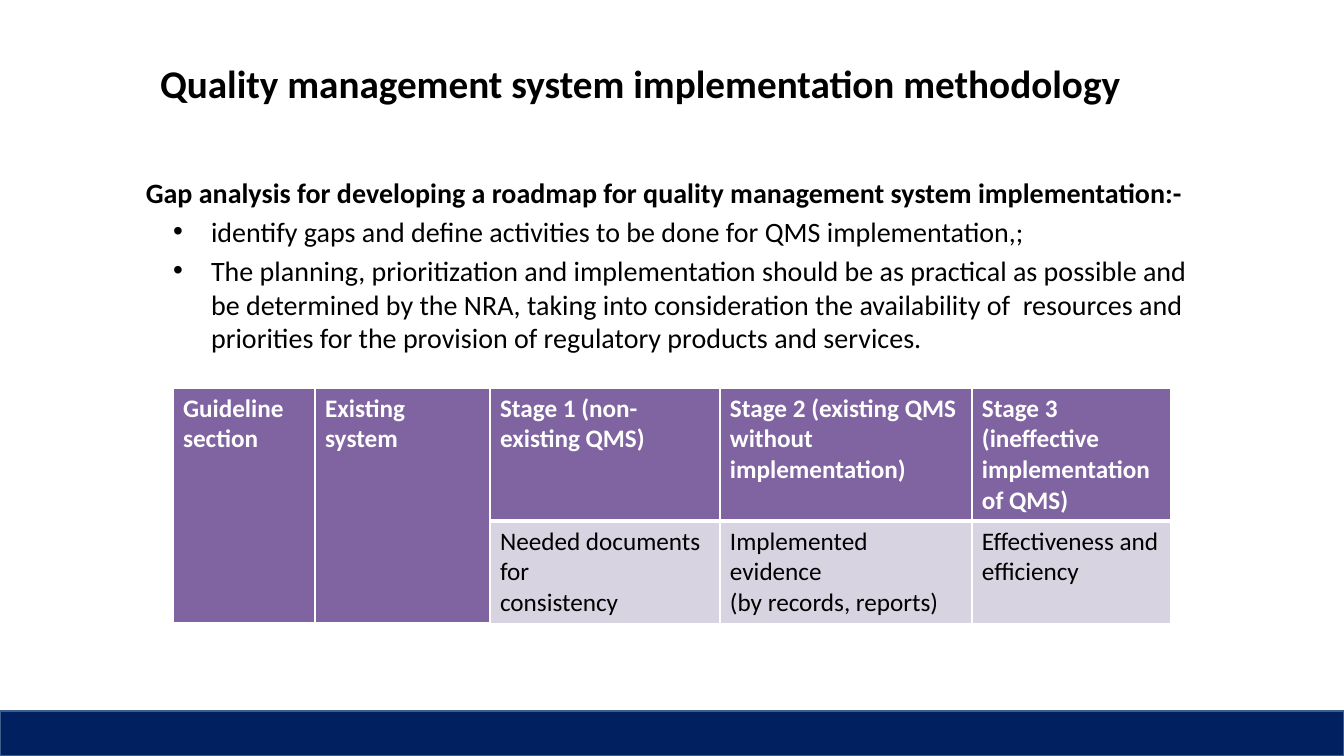
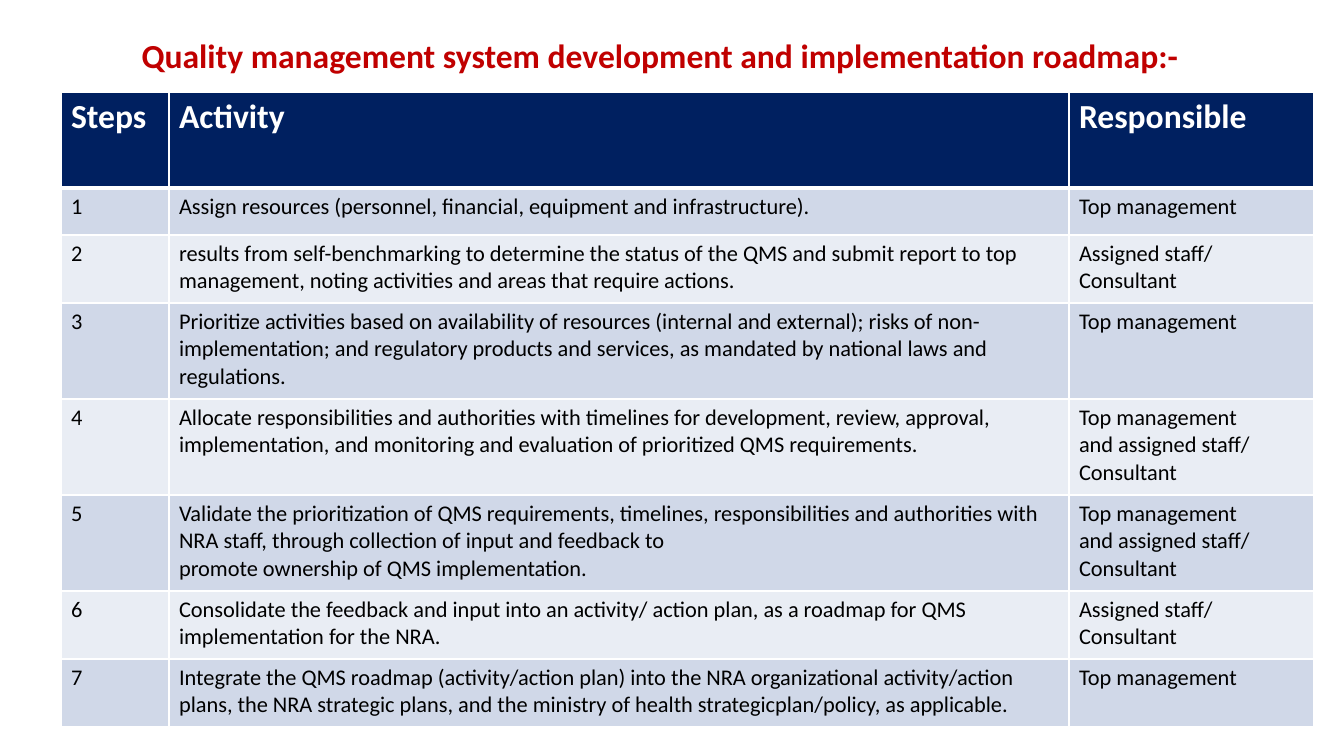
from lxml import etree
from pptx import Presentation
from pptx.dml.color import RGBColor
from pptx.enum.shapes import MSO_SHAPE
from pptx.enum.text import MSO_ANCHOR, MSO_AUTO_SIZE, PP_ALIGN
from pptx.oxml.ns import qn
from pptx.util import Pt

EMU_PER_PX = 914400 / 100.8
SLIDE_W, SLIDE_H = 1344, 756
FONT = "Calibri"
RECTANGLE = MSO_SHAPE.RECTANGLE
MIDDLE, TOP = MSO_ANCHOR.MIDDLE, MSO_ANCHOR.TOP
NO_AUTOFIT = MSO_AUTO_SIZE.NONE
CENTER, LEFT = PP_ALIGN.CENTER, PP_ALIGN.LEFT
TITLE_AND_CONTENT, TITLE_ONLY = 1, 5

BLACK = RGBColor(0x00, 0x00, 0x00)
WHITE = RGBColor(0xFF, 0xFF, 0xFF)
RED = RGBColor(0xC0, 0x00, 0x00)
NAVY = RGBColor(0x00, 0x20, 0x60)
BAND_LINE = RGBColor(0x3A, 0x5F, 0x8C)
PURPLE = RGBColor(0x80, 0x64, 0xA2)
PALE_PURPLE = RGBColor(0xD8, 0xD3, 0xE0)
PALE_BLUES = (RGBColor(0xD0, 0xD8, 0xE8), RGBColor(0xE9, 0xED, 0xF4))

GAP_HEADING = ("Gap analysis for developing a roadmap for quality management "
               "system implementation:-")
GAP_POINTS = (
    "identify gaps and define activities to be done for QMS implementation,;",
    "The planning, prioritization and implementation should be as practical as "
    "possible and be determined by the NRA, taking into consideration the "
    "availability of  resources and priorities for the provision of regulatory "
    "products and services.",
)
STAGES = (
    ("Guideline\nsection", "Existing system", "Stage 1 (non-existing QMS)",
     "Stage 2 (existing QMS\nwithout implementation)",
     "Stage 3 (ineffective\nimplementation of QMS)"),
    ("", "", "Needed documents for\nconsistency",
     "Implemented evidence\n(by records, reports)",
     "Effectiveness and\nefficiency"),
)

MANAGEMENT = "Top management"
STAFF = "Assigned staff/\nConsultant"
BOTH = "Top management\nand assigned staff/\nConsultant"
ROADMAP_HEADER = ("Steps", "Activity", "Responsible")
ROADMAP = (
    ("Assign resources (personnel, financial, equipment and infrastructure).",
     MANAGEMENT),
    ("results from self-benchmarking to determine the status of the QMS and "
     "submit report to top management, noting activities and areas that require "
     "actions.", STAFF),
    ("Prioritize activities based on availability of resources (internal and "
     "external); risks of non-implementation; and regulatory products and "
     "services, as mandated by national laws and regulations.", MANAGEMENT),
    ("Allocate responsibilities and authorities with timelines for development, "
     "review, approval, implementation, and monitoring and evaluation of "
     "prioritized QMS requirements.", BOTH),
    ("Validate the prioritization of QMS requirements, timelines, "
     "responsibilities and authorities with NRA staff, through collection of "
     "input and feedback to\npromote ownership of QMS implementation.", BOTH),
    ("Consolidate the feedback and input into an activity/ action plan, as a "
     "roadmap for QMS implementation for the NRA.", STAFF),
    ("Integrate the QMS roadmap (activity/action plan) into the NRA "
     "organizational activity/action plans, the NRA strategic plans, and the "
     "ministry of health strategicplan/policy, as applicable.", MANAGEMENT),
)


def px(length):
    return round(length * EMU_PER_PX)


def place(shape, box):
    shape.left, shape.top, shape.width, shape.height = map(px, box)


def set_font(paragraph, size, color, bold=False):
    font = paragraph.font
    font.name, font.size, font.bold = FONT, Pt(size), bold
    font.color.rgb = color


def set_bullet(paragraph, char=None, margin=0, hanging=0):
    """Give the paragraph a bullet, or take it away when there is no char."""
    props = paragraph._p.get_or_add_pPr()
    props.set("marL", str(px(margin)))
    props.set("indent", str(-px(hanging)))
    if char:
        etree.SubElement(props, qn("a:buFont"), typeface="Arial")
        etree.SubElement(props, qn("a:buChar"), char=char)
    else:
        etree.SubElement(props, qn("a:buNone"))


def add_title(slide, box, text, size, color):
    title = slide.shapes.title
    place(title, box)
    frame = title.text_frame
    frame.text = text
    frame.vertical_anchor, frame.auto_size = MIDDLE, NO_AUTOFIT
    frame.paragraphs[0].alignment = CENTER
    set_font(frame.paragraphs[0], size, color, bold=True)


def add_gap_analysis(slide, box):
    body = slide.placeholders[1]
    place(body, box)
    frame = body.text_frame
    frame.text = "\n".join((GAP_HEADING, *GAP_POINTS))
    frame.vertical_anchor, frame.auto_size = TOP, NO_AUTOFIT
    heading, *points = frame.paragraphs
    set_bullet(heading)
    heading.alignment, heading.space_before = CENTER, Pt(0)
    set_font(heading, 20, BLACK, bold=True)
    for point in points:
        set_bullet(point, "•", margin=89, hanging=38)
        point.alignment, point.space_before = LEFT, Pt(4)
        set_font(point, 20, BLACK)


def set_borders(cell, bottom):
    """Draw white borders, 1 pt on all sides but the bottom."""
    props = cell._tc.get_or_add_tcPr()
    sides = (("a:lnL", 1), ("a:lnR", 1), ("a:lnT", 1), ("a:lnB", bottom))
    for position, (tag, width) in enumerate(sides):
        line = etree.Element(qn(tag), w=str(Pt(width)))
        fill = etree.SubElement(line, qn("a:solidFill"))
        etree.SubElement(fill, qn("a:srgbClr"), val=str(WHITE))
        props.insert(position, line)


def fill_cell(cell, text, size, fill, header):
    cell.text = text
    cell.fill.solid()
    cell.fill.fore_color.rgb = fill
    set_borders(cell, bottom=3 if header else 1)
    for paragraph in cell.text_frame.paragraphs:
        set_font(paragraph, size, WHITE if header else BLACK, bold=header)


def add_grid(slide, left, top, widths, heights):
    frame = slide.shapes.add_table(
        len(heights), len(widths),
        *map(px, (left, top, sum(widths), sum(heights))))
    table = frame.table
    table.horz_banding = False
    for column, width in zip(table.columns, widths):
        column.width = px(width)
    for row, height in zip(table.rows, heights):
        row.height = px(height)
    return table


def add_stage_table(slide, left, top):
    table = add_grid(slide, left, top, (142, 175, 230, 252, 199), (133, 102))
    for r, row in enumerate(STAGES):
        for c, text in enumerate(row):
            header = r == 0 or c < 2
            fill_cell(table.cell(r, c), text, 18,
                      PURPLE if header else PALE_PURPLE, header)
    for c in range(2):
        table.cell(0, c).merge(table.cell(1, c))


def add_roadmap_table(slide, left, top):
    table = add_grid(slide, left, top, (108, 900, 245),
                     (96, 47, 68, 96, 96, 96, 68, 68))
    for c, text in enumerate(ROADMAP_HEADER):
        fill_cell(table.cell(0, c), text, 24, NAVY, header=True)
    for step, row in enumerate(ROADMAP, start=1):
        for c, text in enumerate((str(step), *row)):
            fill_cell(table.cell(step, c), text, 16,
                      PALE_BLUES[(step - 1) % 2], header=False)


def add_footer_band(slide, height):
    band = slide.shapes.add_shape(
        RECTANGLE, *map(px, (0, SLIDE_H - height, SLIDE_W, height)))
    band.shadow.inherit = False
    band.fill.solid()
    band.fill.fore_color.rgb = NAVY
    band.line.color.rgb = BAND_LINE
    band.line.width = Pt(2)


def add_methodology_slide(deck):
    slide = deck.slides.add_slide(deck.slide_layouts[TITLE_AND_CONTENT])
    add_title(slide, (21, 20, 1238, 126),
              "Quality management system implementation methodology", 28, BLACK)
    add_gap_analysis(slide, (112, 170, 1104, 200))
    add_stage_table(slide, 173, 388)
    add_footer_band(slide, 45)


def add_roadmap_slide(deck):
    slide = deck.slides.add_slide(deck.slide_layouts[TITLE_ONLY])
    add_title(slide, (108, 28, 1104, 54),
              "Quality management system development and implementation "
              "roadmap:-", 24, RED)
    add_roadmap_table(slide, 61, 92)


def main():
    deck = Presentation()
    deck.slide_width, deck.slide_height = px(SLIDE_W), px(SLIDE_H)
    add_methodology_slide(deck)
    add_roadmap_slide(deck)
    deck.save("out.pptx")


if __name__ == "__main__":
    main()
